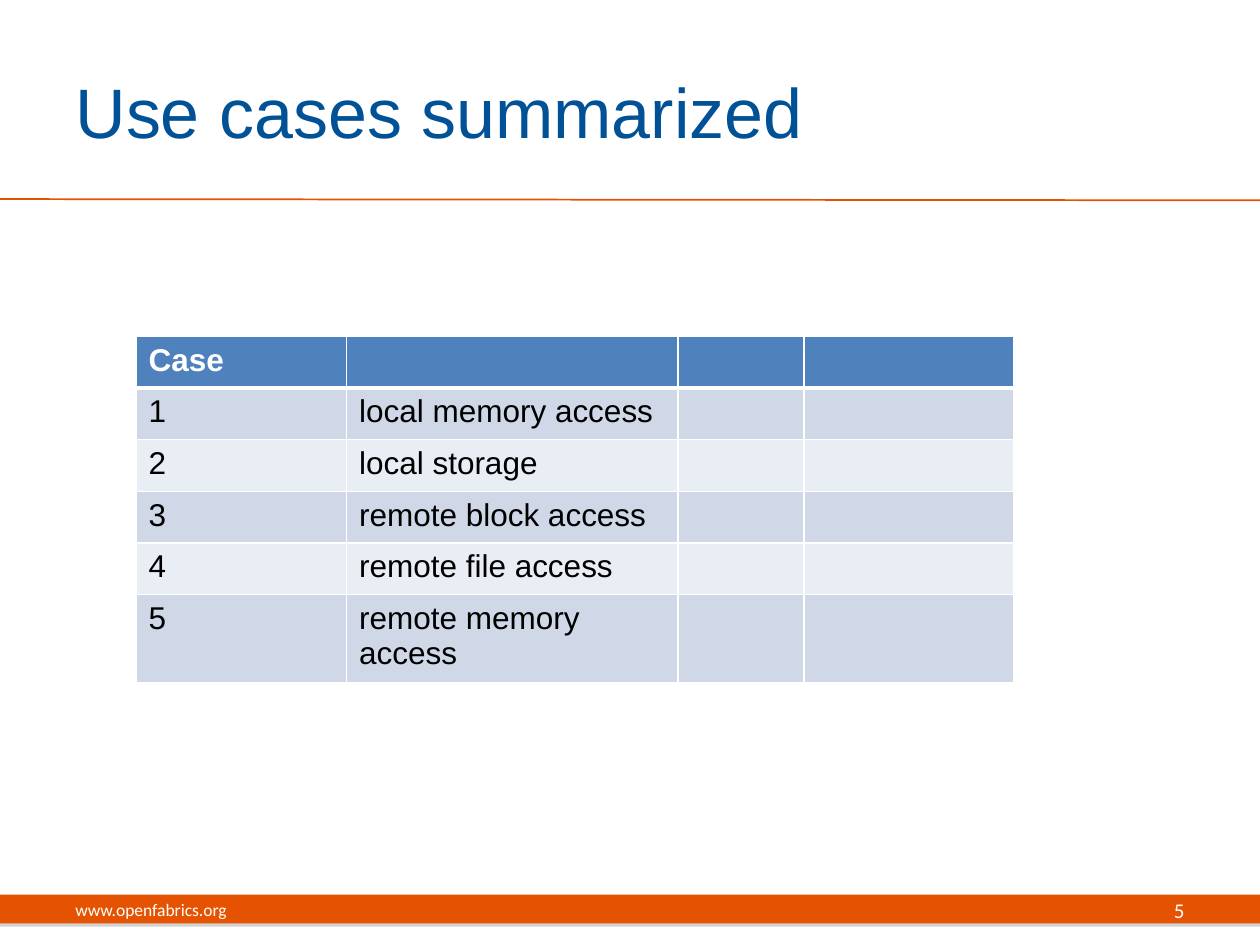
import lxml.etree
import pptx
import pptx.dml.color
import pptx.enum.shapes
import pptx.enum.text
import pptx.oxml
import pptx.oxml.ns
import pptx.util
from pptx.util import Inches

COLORS = {
    "orange": "E55302",
    "title": "005195",
    "header": "4F81BD",
    "odd": "D0D8E8",
    "even": "E9EDF4",
    "white": "FFFFFF",
    "black": "000000",
    "shadow": "808080",
}
NS = pptx.oxml.ns.nsdecls("a")
qn = pptx.oxml.ns.qn


def rgb(name):
    return pptx.dml.color.RGBColor.from_string(COLORS[name])


def write(paragraph, text, size, font, color, bold=False):
    run = paragraph.add_run()
    run.text = text
    run.font.size = pptx.util.Pt(size)
    run.font.name = font
    run.font.bold = bold
    run.font.color.rgb = rgb(color)


deck = pptx.Presentation()
deck.slide_width = Inches(10)
deck.slide_height = Inches(7.5)
slide = deck.slides.add_slide(deck.slide_layouts[5])

footer_band = slide.shapes.add_shape(
    pptx.enum.shapes.MSO_SHAPE.RECTANGLE, Inches(0), Inches(7.1), Inches(10), Inches(0.23)
)
footer_band.fill.solid()
footer_band.fill.fore_color.rgb = rgb("orange")
footer_band.line.fill.background()
footer_band.shadow.inherit = False
footer_band.element.spPr.find(qn("a:effectLst")).append(
    pptx.oxml.parse_xml(
        f'<a:outerShdw {NS} dist="23000" dir="5400000" rotWithShape="0">'
        f'<a:srgbClr val="{COLORS["shadow"]}"><a:alpha val="35000"/></a:srgbClr></a:outerShdw>'
    )
)

title_rule = slide.shapes.add_connector(
    pptx.enum.shapes.MSO_CONNECTOR.STRAIGHT, Inches(0), Inches(1.58), Inches(10), Inches(1.59)
)
title_rule.line.color.rgb = rgb("orange")
title_rule.line.width = pptx.util.Pt(1)
lxml.etree.SubElement(title_rule.element.spPr, qn("a:effectLst"))

title = slide.shapes.title
title.left, title.top = Inches(0.5), Inches(0.25)
title.width, title.height = Inches(8.17), Inches(1.25)
title.text_frame.vertical_anchor = pptx.enum.text.MSO_ANCHOR.MIDDLE
heading = title.text_frame.paragraphs[0]
heading.alignment = pptx.enum.text.PP_ALIGN.LEFT
write(heading, "Use cases summarized", 40, "Arial", "title")

footer_texts = [
    ("www.openfabrics.org", 0.5, 3.17, 10, pptx.enum.text.PP_ALIGN.LEFT),
    ("5", 7.17, 2.33, 12, pptx.enum.text.PP_ALIGN.RIGHT),
]
for text, left, width, size, alignment in footer_texts:
    footer = slide.shapes.add_textbox(Inches(left), Inches(7.02), Inches(width), Inches(0.4))
    footer.text_frame.word_wrap = True
    footer.text_frame.vertical_anchor = pptx.enum.text.MSO_ANCHOR.MIDDLE
    line = footer.text_frame.paragraphs[0]
    line.alignment = alignment
    write(line, text, size, "Calibri", "white")

cases = [
    ("Case", ""),
    ("1", "local memory access"),
    ("2", "local storage"),
    ("3", "remote block access"),
    ("4", "remote file access"),
    ("5", "remote memory access"),
]
column_widths = [1.67, 2.63, 1, 1.67]
row_height = 0.41
case_table = slide.shapes.add_table(
    len(cases), len(column_widths), Inches(1.08), Inches(2.67),
    Inches(sum(column_widths)), Inches(row_height * len(cases)),
).table
for column, width in zip(case_table.columns, column_widths):
    column.width = Inches(width)

for index, (row, case) in enumerate(zip(case_table.rows, cases)):
    row.height = Inches(row_height)
    is_header = index == 0
    fill = "header" if is_header else "odd" if index % 2 else "even"
    border_points = {"L": 1, "R": 1, "T": 3 if index == 1 else 1, "B": 3 if is_header else 1}
    for cell in row.cells:
        cell.fill.solid()
        cell.fill.fore_color.rgb = rgb(fill)
        properties = cell._tc.get_or_add_tcPr()
        for position, (side, points) in enumerate(border_points.items()):
            properties.insert(position, pptx.oxml.parse_xml(
                f'<a:ln{side} {NS} w="{pptx.util.Pt(points)}"><a:solidFill>'
                f'<a:srgbClr val="{COLORS["white"]}"/></a:solidFill></a:ln{side}>'
            ))
    for cell, text in zip(row.cells, case):
        if text:
            write(cell.text_frame.paragraphs[0], text, 18, "Arial",
                  "white" if is_header else "black", is_header)

deck.save("out.pptx")
